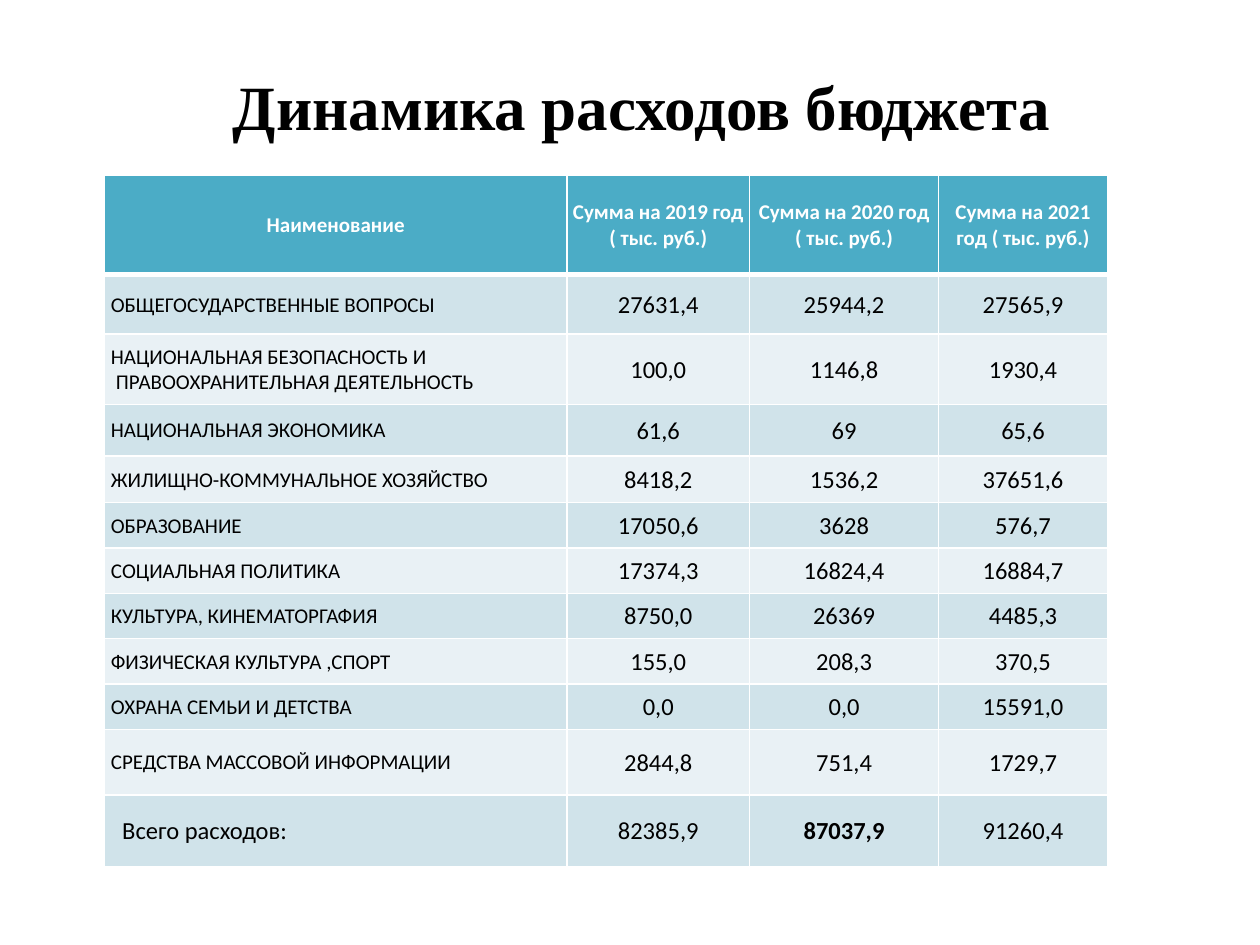
from lxml import etree
from pptx import Presentation
from pptx.dml.color import RGBColor
from pptx.enum.text import MSO_ANCHOR, PP_ALIGN
from pptx.oxml.ns import qn
from pptx.util import Inches, Pt

CENTER, LEFT = PP_ALIGN.CENTER, PP_ALIGN.LEFT
MIDDLE = MSO_ANCHOR.MIDDLE

HEADER_FILL, BAND_FILLS = "4BACC6", ("D0E3EA", "E9F1F5")
WHITE, BLACK = "FFFFFF", "000000"
TITLE_ONLY = 5

COL_WIDTHS = (3.67, 1.45, 1.5, 1.34)
ROW_HEIGHTS = (0.79, 0.47, 0.56, 0.41, 0.37, *[0.36] * 5, 0.52, 0.57)

HEADERS = ("Наименование", "Сумма на 2019 год\v( тыс. руб.)",
           "Сумма на 2020 год\v( тыс. руб.)", "Сумма на 2021\vгод ( тыс. руб.)")
EXPENSES = (
    ("ОБЩЕГОСУДАРСТВЕННЫЕ ВОПРОСЫ", "27631,4", "25944,2", "27565,9"),
    ("НАЦИОНАЛЬНАЯ БЕЗОПАСНОСТЬ И\nПРАВООХРАНИТЕЛЬНАЯ ДЕЯТЕЛЬНОСТЬ",
     "100,0", "1146,8", "1930,4"),
    ("НАЦИОНАЛЬНАЯ ЭКОНОМИКА", "61,6", "69", "65,6"),
    ("ЖИЛИЩНО-КОММУНАЛЬНОЕ ХОЗЯЙСТВО", "8418,2", "1536,2", "37651,6"),
    ("ОБРАЗОВАНИЕ", "17050,6", "3628", "576,7"),
    ("СОЦИАЛЬНАЯ ПОЛИТИКА", "17374,3", "16824,4", "16884,7"),
    ("КУЛЬТУРА, КИНЕМАТОРГАФИЯ", "8750,0", "26369", "4485,3"),
    ("ФИЗИЧЕСКАЯ КУЛЬТУРА ,СПОРТ", "155,0", "208,3", "370,5"),
    ("ОХРАНА СЕМЬИ И ДЕТСТВА", "0,0", "0,0", "15591,0"),
    ("СРЕДСТВА МАССОВОЙ ИНФОРМАЦИИ", "2844,8", "751,4", "1729,7"),
    ("Всего расходов:", "82385,9", "87037,9", "91260,4"),
)


def rgb(value):
    return RGBColor.from_string(value)


def write(tf, text, size=14, font="Calibri", color=BLACK, bold=False,
          align=CENTER, indent=0, step=0):
    """Fill a text frame; each further paragraph is indented by step more."""
    tf.text = text
    for i, p in enumerate(tf.paragraphs):
        p.alignment = align
        if indent:
            p._p.get_or_add_pPr().set("marL", str(Inches(indent + i * step)))
        for r in p.runs:
            r.font.name, r.font.size, r.font.bold = font, Pt(size), bold
            r.font.color.rgb = rgb(color)


def set_borders(cell, **widths):
    tcPr = cell._tc.get_or_add_tcPr()
    for side in "LRTB":
        ln = etree.SubElement(tcPr, qn(f"a:ln{side}"), w=str(Pt(widths.get(side, 1))))
        fill = etree.SubElement(ln, qn("a:solidFill"))
        etree.SubElement(fill, qn("a:srgbClr"), val=WHITE)


def format_cell(cell, fill, **borders):
    cell.margin_left = cell.margin_right = cell.margin_top = Inches(0.01)
    cell.margin_bottom = 0
    cell.vertical_anchor = MIDDLE
    set_borders(cell, **borders)
    cell.fill.solid()
    cell.fill.fore_color.rgb = rgb(fill)


def add_title(s):
    sp = s.shapes.title
    sp.left, sp.top, sp.width, sp.height = map(Inches, (0.59, 0.21, 9, 1.25))
    sp.text_frame.vertical_anchor = MIDDLE
    write(sp.text_frame, "Динамика расходов бюджета", size=36,
          font="Times New Roman", bold=True)


def add_expense_table(s):
    table = s.shapes.add_table(
        len(ROW_HEIGHTS), len(COL_WIDTHS), Inches(0.83), Inches(1.39),
        Inches(sum(COL_WIDTHS)), Inches(sum(ROW_HEIGHTS))).table
    for column, width in zip(table.columns, COL_WIDTHS):
        column.width = Inches(width)
    for row, height in zip(table.rows, ROW_HEIGHTS):
        row.height = Inches(height)

    # Header row
    for cell, text in zip(table.rows[0].cells, HEADERS):
        format_cell(cell, HEADER_FILL, B=3)
        write(cell.text_frame, text, size=12, color=WHITE, bold=True)

    # Banded expense rows, the last one being the total
    last = len(EXPENSES) - 1
    for i, values in enumerate(EXPENSES):
        for j, text in enumerate(values):
            cell = table.cell(i + 1, j)
            format_cell(cell, BAND_FILLS[i % 2], T=1 if i else 3)
            if j:
                write(cell.text_frame, text, bold=(i == last and j == 2))
            elif i == last:
                write(cell.text_frame, text, align=LEFT, indent=0.13)
            else:
                write(cell.text_frame, text, size=12, align=LEFT,
                      indent=0.04, step=0.04)


def main():
    prs = Presentation()
    prs.slide_width, prs.slide_height = Inches(10), Inches(7.5)
    s = prs.slides.add_slide(prs.slide_layouts[TITLE_ONLY])
    add_expense_table(s)
    add_title(s)
    prs.save("out.pptx")


if __name__ == "__main__":
    main()
